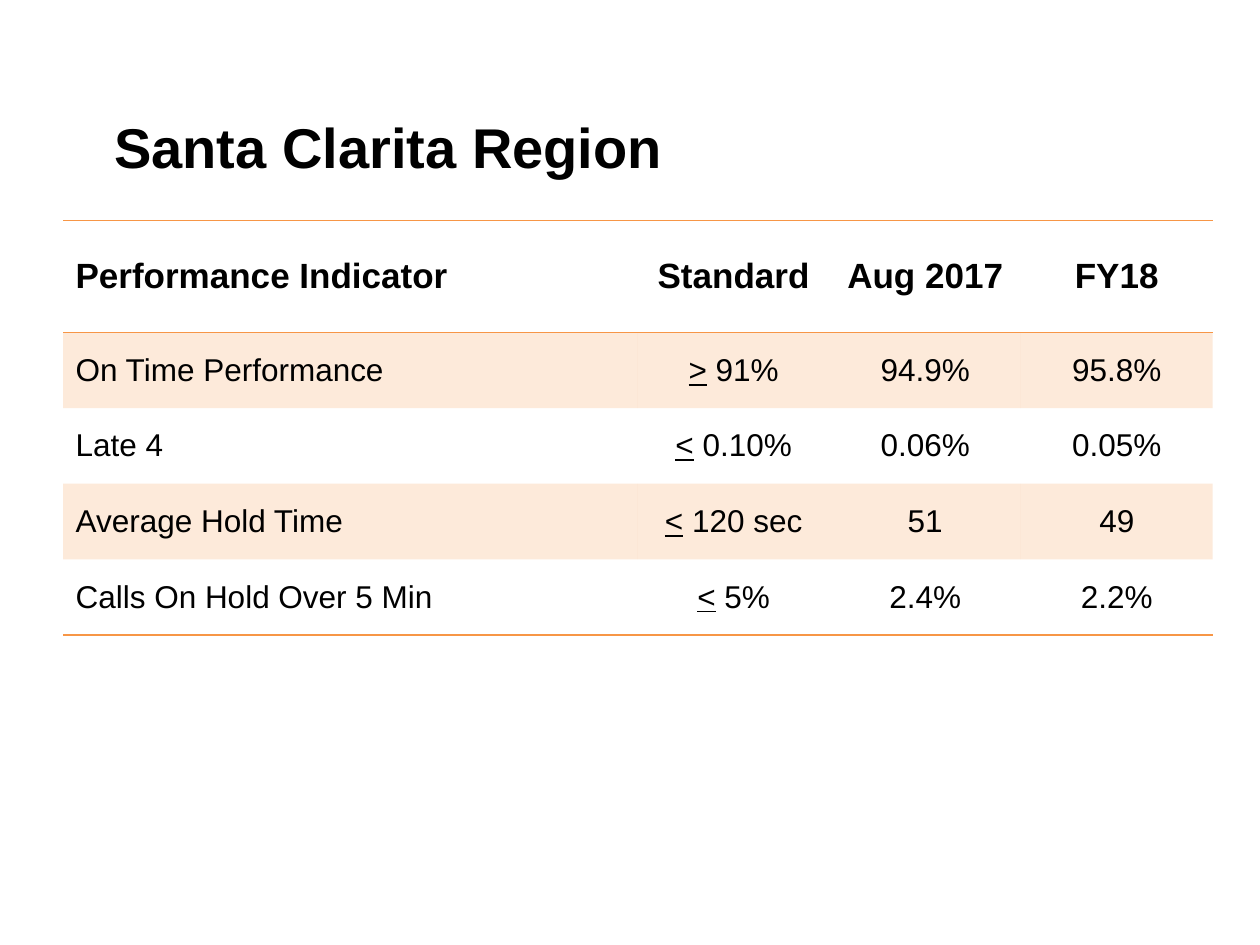
from dataclasses import dataclass

from lxml import etree
from pptx import Presentation
from pptx.dml.color import RGBColor
from pptx.enum import text
from pptx.oxml import ns
from pptx.util import Pt


@dataclass(frozen=True)
class Theme:
    font: str = "Arial"
    ink: str = "000000"
    accent: str = "F79646"
    tint: int = 20  # percent opacity of the banded rows
    rule: float = 1
    title: float = 32
    head: float = 20
    body: float = 18


@dataclass(frozen=True)
class Metric:
    name: str
    sign: str
    goal: str
    month: str
    year: str


THEME = Theme()
HEADS = ("Performance Indicator", "Standard", "Aug 2017", "FY18")
METRICS = (
    Metric("On Time Performance", ">", " 91%", "94.9%", "95.8%"),
    Metric("Late 4", "<", " 0.10%", "0.06%", "0.05%"),
    Metric("Average Hold Time", "<", " 120 sec", "51", "49"),
    Metric("Calls On Hold Over 5 Min", "<", " 5%", "2.4%", "2.2%"),
)
WIDTHS = (328.5, 109.5, 109.5, 109.5)
HEAD_ROW, BODY_ROW = 64, 43.2
NO_STYLE = "{2D5ABB26-0587-4C30-8999-92F81FD0307C}"


def style(para, size: float, bold: bool) -> None:
    font = para.font
    font.name, font.size, font.bold = THEME.font, Pt(size), bold
    font.color.rgb = RGBColor.from_string(THEME.ink)


def add_title(slide, words: str) -> None:
    box = slide.shapes.add_textbox(Pt(58.3), Pt(60.5), Pt(604), Pt(46))
    frame = box.text_frame
    frame.word_wrap = True
    frame.vertical_anchor = text.MSO_ANCHOR.MIDDLE
    frame.text = words
    style(frame.paragraphs[0], THEME.title, True)


def fill_cell(cell, parts: tuple[str, ...], col: int, size: float, bold: bool) -> None:
    """Write the parts as runs; the first of several is underlined."""
    cell.vertical_anchor = text.MSO_ANCHOR.MIDDLE
    para = cell.text_frame.paragraphs[0]
    para.alignment = text.PP_ALIGN.CENTER if col else text.PP_ALIGN.LEFT
    for part in parts:
        para.add_run().text = part
    if len(parts) > 1:
        para.runs[0].font.underline = True
    style(para, size, bold)


def shade(cell, banded: bool) -> None:
    if not banded:
        cell.fill.background()
        return
    cell.fill.solid()
    cell.fill.fore_color.rgb = RGBColor.from_string(THEME.accent)
    color = cell._tc.tcPr.find(".//" + ns.qn("a:srgbClr"))
    etree.SubElement(color, ns.qn("a:alpha"), val=str(THEME.tint * 1000))


def rule(cell, sides: str) -> None:
    """Draw borders on the given sides, T before B, ahead of the fill."""
    for spot, side in enumerate(sides):
        line = etree.Element(ns.qn(f"a:ln{side}"), w=str(Pt(THEME.rule)))
        solid = etree.SubElement(line, ns.qn("a:solidFill"))
        etree.SubElement(solid, ns.qn("a:srgbClr"), val=THEME.accent)
        cell._tc.tcPr.insert(spot, line)


def add_grid(slide) -> None:
    rows = [[(head,) for head in HEADS]]
    rows += [[(m.name,), (m.sign, m.goal), (m.month,), (m.year,)] for m in METRICS]
    last = len(rows) - 1
    tall = HEAD_ROW + BODY_ROW * last
    table = slide.shapes.add_table(
        len(rows), len(WIDTHS), Pt(36), Pt(126), Pt(sum(WIDTHS)), Pt(tall)
    ).table
    table.first_row = table.horz_banding = False
    table._tbl.tblPr.find(ns.qn("a:tableStyleId")).text = NO_STYLE
    for col, width in enumerate(WIDTHS):
        table.columns[col].width = Pt(width)
    for row, cells in enumerate(rows):
        top = row == 0
        table.rows[row].height = Pt(HEAD_ROW if top else BODY_ROW)
        size = THEME.head if top else THEME.body
        sides = {0: "TB", last: "B"}.get(row, "")
        for col, parts in enumerate(cells):
            cell = table.cell(row, col)
            fill_cell(cell, parts, col, size, top)
            shade(cell, row % 2 == 1)
            rule(cell, sides)


def main() -> None:
    deck = Presentation()
    deck.slide_width, deck.slide_height = Pt(720), Pt(540)
    slide = deck.slides.add_slide(deck.slide_layouts[6])
    add_title(slide, "Santa Clarita Region")
    add_grid(slide)
    deck.save("out.pptx")


if __name__ == "__main__":
    main()
